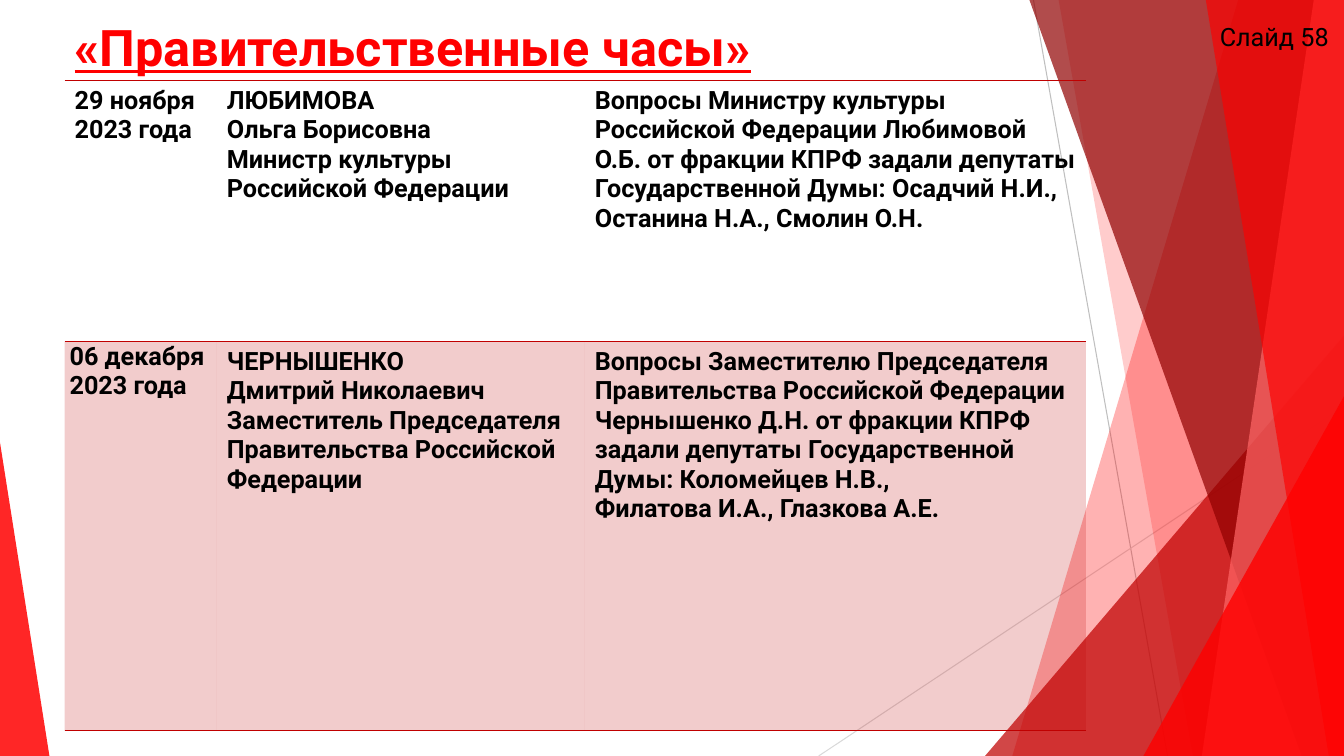
from lxml import etree
from pptx import Presentation, util as u
from pptx.dml.color import RGBColor
from pptx.enum import shapes, text
from pptx.oxml import ns

# Slide grid: one column and one row per inch
WIDE, HIGH = 13.33, 7.5
LEFT = 0.64
COLS = (1.51, 3.65, 4.97)
ROWS = (2.59, 3.86)
FONT = "Roboto"
PLAIN = "{2D5ABB26-0587-4C30-8999-92F81FD0307C}"

RED = RGBColor(0xFF, 0x00, 0x00)
ROSE = RGBColor(0xFF, 0x66, 0x66)
WINE = RGBColor(0xC0, 0x00, 0x00)
DARK = RGBColor(0x90, 0x00, 0x00)
GREY = RGBColor(0xBF, 0xBF, 0xBF)
PALE = RGBColor(0xD9, 0xD9, 0xD9)
BLACK = RGBColor(0x00, 0x00, 0x00)

HOURS = (
    ("29 ноября 2023 года",
     "ЛЮБИМОВА\nОльга Борисовна\nМинистр культуры Российской Федерации",
     "Вопросы Министру культуры Российской Федерации Любимовой О.Б. "
     "от фракции КПРФ задали депутаты Государственной Думы: "
     "Осадчий Н.И., Останина Н.А., Смолин О.Н."),
    ("06 декабря 2023 года",
     "ЧЕРНЫШЕНКО\nДмитрий Николаевич\n"
     "Заместитель Председателя Правительства Российской Федерации",
     "Вопросы Заместителю Председателя Правительства Российской Федерации "
     "Чернышенко Д.Н. от фракции КПРФ задали депутаты Государственной Думы: "
     "Коломейцев Н.В.,\vФилатова И.А., Глазкова А.Е."),
)


def grid(*spans):
    return [u.Inches(n) for n in spans]


def tint(fill, color, share):
    """Solid fill with an opacity in percent."""
    fill.solid()
    fill.fore_color.rgb = color
    node = fill._xPr.find(ns.qn("a:solidFill"))[0]
    etree.SubElement(node, ns.qn("a:alpha"), val=str(share * 1000))


def finish(shape, color, share):
    shape.shadow.inherit = False
    shape.line.fill.background()
    tint(shape.fill, color, share)


def ray(slide, start, end, color):
    line = slide.shapes.add_connector(
        shapes.MSO_CONNECTOR.STRAIGHT, *grid(*start, *end))
    line.line.color.rgb = color
    line.line.width = u.Pt(0.75)
    etree.SubElement(line._element.spPr, ns.qn("a:effectLst"))


def band(slide, top, foot, color, share):
    """Panel from a slanted left edge to the right side of the slide."""
    pen = slide.shapes.build_freeform(*grid(top, 0), scale=1.0)
    ends = ((WIDE, 0), (WIDE, HIGH), (foot, HIGH))
    pen.add_line_segments([grid(*end) for end in ends], close=True)
    finish(pen.convert_to_shape(), color, share)


def wedge(slide, left, top, width, peak, color, share):
    """Triangle that stands on the bottom of the slide."""
    shape = slide.shapes.add_shape(
        shapes.MSO_SHAPE.ISOSCELES_TRIANGLE,
        *grid(left, top, width, HIGH - top))
    shape.adjustments[0] = peak
    finish(shape, color, share)


def style(frame, size, color=BLACK, bold=False, under=False):
    for para in frame.paragraphs:
        for run in para.runs:
            font = run.font
            font.name, font.size = FONT, u.Pt(size)
            font.bold, font.underline = bold, under
            font.color.rgb = color


def rule(cell, *sides):
    props = cell._tc.get_or_add_tcPr()
    for spot, side in enumerate(sides):
        edge = etree.Element(ns.qn("a:" + side), w=str(u.Pt(1)))
        fill = etree.SubElement(edge, ns.qn("a:solidFill"))
        etree.SubElement(fill, ns.qn("a:srgbClr"), val=str(WINE))
        props.insert(spot, edge)


def decor(slide):
    ray(slide, (10.25, 0), (11.58, HIGH), GREY)
    ray(slide, (WIDE, 4.03), (8.12, HIGH), PALE)
    band(slide, 12.28, 10.04, RED, 30)
    band(slide, 10.5, 11.83, RED, 20)
    wedge(slide, 9.77, 3.33, 3.56, 1, WINE, 72)
    band(slide, 10.21, 12.91, DARK, 70)
    band(slide, 13.03, 11.92, ROSE, 70)
    band(slide, 11.96, 13.18, RED, 65)
    wedge(slide, 11.34, 3.93, 1.99, 1, RED, 80)
    wedge(slide, 0, 4.39, 0.49, 0, RED, 85)


def head(slide, words):
    title = slide.shapes.title
    title.left, title.top, title.width, title.height = grid(
        LEFT, 0.06, 9.4, 0.74)
    frame = title.text_frame
    frame.text = words
    frame.word_wrap = True
    frame.auto_size = text.MSO_AUTO_SIZE.NONE
    frame.vertical_anchor = text.MSO_ANCHOR.TOP
    frame.margin_top = u.Inches(0.1)
    para = frame.paragraphs[0]
    para.alignment = text.PP_ALIGN.LEFT
    para.line_spacing = 1.0
    style(frame, 36, RED, True, True)


def agenda(slide):
    table = slide.shapes.add_table(
        len(ROWS), len(COLS),
        *grid(LEFT, 0.8, sum(COLS), sum(ROWS))).table
    table.first_row = table.horz_banding = False
    table._tbl.tblPr.find(ns.qn("a:tableStyleId")).text = PLAIN
    for col, width in zip(table.columns, COLS):
        col.width = u.Inches(width)
    for row, height, texts in zip(table.rows, ROWS, HOURS):
        row.height = u.Inches(height)
        for cell, words in zip(row.cells, texts):
            cell.text_frame.text = words
            style(cell.text_frame, 18, bold=True)
    for cell in table.rows[0].cells:
        cell.fill.background()
        rule(cell, "lnT", "lnB")
    for cell in table.rows[1].cells:
        tint(cell.fill, WINE, 20)
        rule(cell, "lnT", "lnB")
    # The second date sits tight in its corner
    date = table.cell(1, 0)
    date.margin_left = date.margin_right = u.Inches(0.05)
    date.margin_top = date.margin_bottom = 0


def label(slide, words):
    box = slide.shapes.add_textbox(*grid(12, 0.16, 1.33, 0.4))
    frame = box.text_frame
    frame.text = words
    frame.word_wrap = False
    frame.auto_size = text.MSO_AUTO_SIZE.SHAPE_TO_FIT_TEXT
    style(frame, 18)


def main():
    deck = Presentation()
    deck.slide_width, deck.slide_height = grid(WIDE, HIGH)
    slide = deck.slides.add_slide(deck.slide_layouts[5])
    decor(slide)
    head(slide, "«Правительственные часы»")
    agenda(slide)
    label(slide, "Слайд 58")
    deck.save("out.pptx")


if __name__ == "__main__":
    main()
